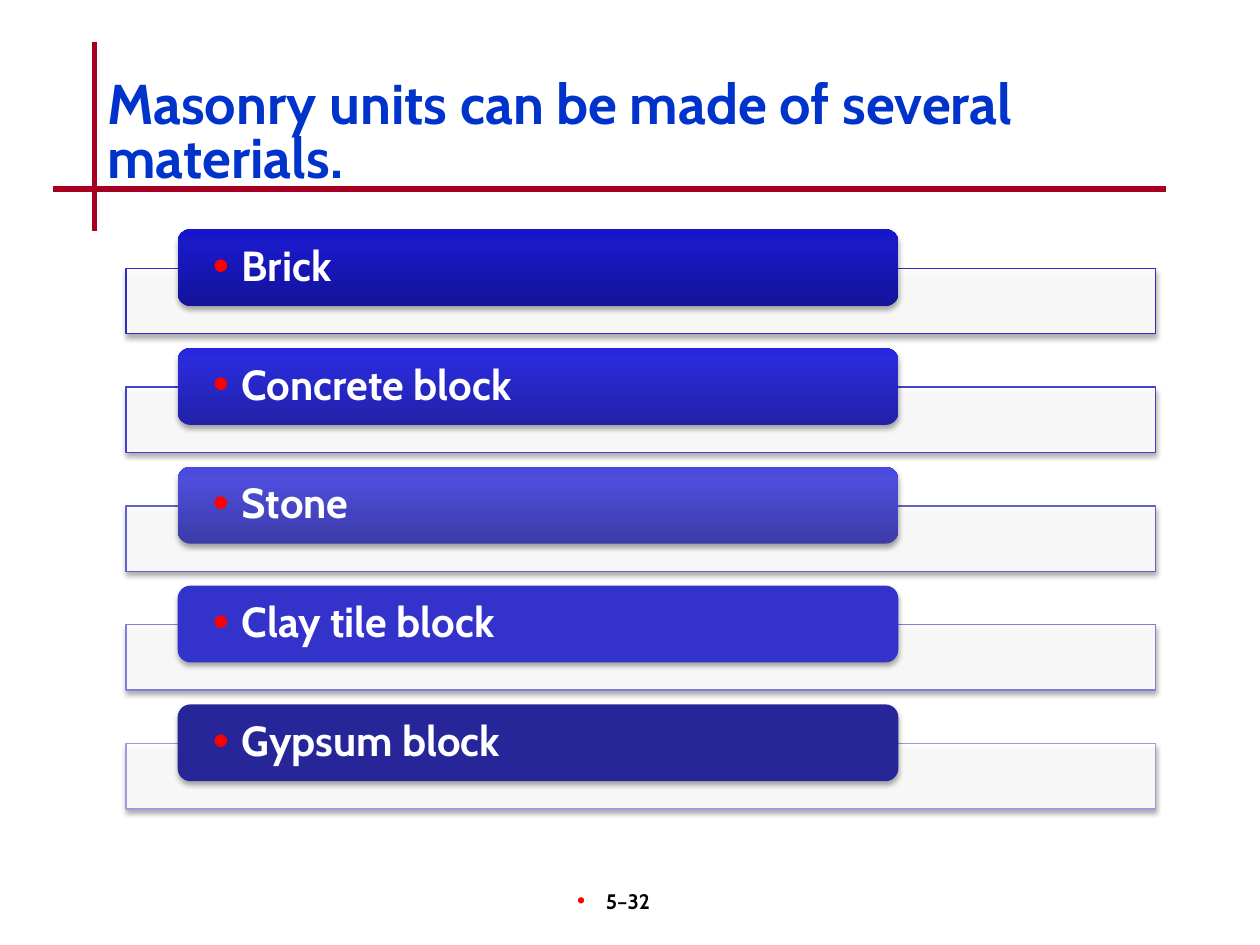
"""Build the slide listing the materials of masonry units."""
from lxml import etree
from pptx import Presentation
from pptx.dml.color import RGBColor
from pptx.enum import shapes, text
from pptx.oxml import parse_xml
from pptx.oxml.ns import nsdecls, qn
from pptx.util import Inches, Pt

TITLE = "Masonry units can be made of several materials."
PAGE = "5–32"
MATERIALS = [
    ("Brick", "2E2EB9", ("13139A", "1919C8", "1515CC")),
    ("Concrete block", "4141CB", ("2121A7", "2A2AD9", "2727DD")),
    ("Stone", "6060D0", ("3B3BA8", "4D4DDA", "4A4ADE")),
    ("Clay tile block", "7E7ED6", ("3333CC",)),
    ("Gypsum block", "9C9CDD", ("262699",)),
]
COLORS = {"title": "0033CC", "rule": "A50021", "bullet": "FF0000",
          "page": "000000", "white": "FFFFFF", "shadow": "000000"}
RULES = [(0.75, 0.33, 0.75, 1.83), (0.42, 1.5, 9.25, 1.5)]
FONT = "Cabin"
STOPS = (0, 80, 100)
FIRST_TOP, LAST_TOP = 1.82, 5.59
PITCH = (LAST_TOP - FIRST_TOP) / (len(MATERIALS) - 1)
BAR_DROP = 0.31
HANG = 0.23


def rgb(value):
    return RGBColor.from_string(value)


def write(paragraph, words, size, color):
    run = paragraph.add_run()
    run.text = words
    run.font.name, run.font.size, run.font.bold = FONT, Pt(size), True
    run.font.color.rgb = rgb(color)


def add_bullet(paragraph, percent):
    props = paragraph._p.get_or_add_pPr()
    props.set("marL", str(Inches(HANG)))
    props.set("indent", str(-Inches(HANG)))
    tint = etree.SubElement(props, qn("a:buClr"))
    etree.SubElement(tint, qn("a:srgbClr"), val=COLORS["bullet"])
    etree.SubElement(props, qn("a:buSzPct"), val=str(percent * 1000))
    etree.SubElement(props, qn("a:buFont"), typeface="Arial")
    etree.SubElement(props, qn("a:buChar"), char="•")


def add_shadow(shape):
    shape._element.spPr.append(parse_xml(
        f'<a:effectLst {nsdecls("a")}><a:outerShdw blurRad="{Pt(3.1)}" dist="{Pt(1.8)}" '
        f'dir="5400000" rotWithShape="0"><a:srgbClr val="{COLORS["shadow"]}">'
        '<a:alpha val="35000"/></a:srgbClr></a:outerShdw></a:effectLst>'))


def fill_gradient(shape, tones):
    stops = "".join(f'<a:gs pos="{pos * 1000}"><a:srgbClr val="{tone}"/></a:gs>'
                    for pos, tone in zip(STOPS, tones))
    shape._element.spPr.find(qn("a:prstGeom")).addnext(parse_xml(
        f'<a:gradFill {nsdecls("a")} rotWithShape="1"><a:gsLst>{stops}</a:gsLst>'
        '<a:lin ang="16200000" scaled="0"/></a:gradFill>'))


def add_box(slide, preset, *place):
    return slide.shapes.add_shape(preset, *map(Inches, place))


def add_material(slide, top, name, outline, tones):
    bar = add_box(slide, shapes.MSO_SHAPE.RECTANGLE, 1, top + BAR_DROP, 8.17, 0.52)
    bar.fill.solid()
    bar.fill.fore_color.rgb = rgb(COLORS["white"])
    tint = bar._element.spPr.find(f'{qn("a:solidFill")}/{qn("a:srgbClr")}')
    etree.SubElement(tint, qn("a:alpha"), val="90000")
    bar.line.color.rgb = rgb(outline)
    bar.line.width = Pt(0.75)
    add_shadow(bar)

    label = add_box(slide, shapes.MSO_SHAPE.ROUNDED_RECTANGLE, 1.41, top, 5.72, 0.61)
    if len(tones) > 1:
        fill_gradient(label, tones)
    else:
        label.fill.solid()
        label.fill.fore_color.rgb = rgb(tones[0])
    label.line.fill.background()
    add_shadow(label)
    frame = label.text_frame
    frame.margin_left = frame.margin_right = Inches(0.25)
    frame.margin_top = frame.margin_bottom = 0
    frame.vertical_anchor = text.MSO_ANCHOR.MIDDLE
    line = frame.paragraphs[0]
    line.alignment = text.PP_ALIGN.LEFT
    line.line_spacing = 0.9
    add_bullet(line, 110)
    write(line, name, 24, COLORS["white"])


def add_title(slide):
    title = slide.shapes.title
    title.left, title.top, title.width, title.height = map(Inches, (0.75, 0.55, 8.5, 1))
    frame = title.text_frame
    frame.word_wrap = True
    frame.auto_size = text.MSO_AUTO_SIZE.NONE
    frame.vertical_anchor = text.MSO_ANCHOR.BOTTOM
    line = frame.paragraphs[0]
    line.alignment = text.PP_ALIGN.LEFT
    line.line_spacing = 0.8
    write(line, TITLE, 32, COLORS["title"])


def add_page_number(slide):
    frame = slide.shapes.add_textbox(*map(Inches, (3.92, 7, 2.08, 0.5))).text_frame
    frame.word_wrap = True
    frame.margin_right = Inches(0.28)
    line = frame.paragraphs[0]
    line.alignment = text.PP_ALIGN.CENTER
    add_bullet(line, 110)
    write(line, PAGE, 12, COLORS["page"])


def main():
    deck = Presentation()
    deck.slide_width, deck.slide_height = Inches(10), Inches(7.5)
    slide = deck.slides.add_slide(deck.slide_layouts[5])
    for ends in RULES:
        rule = slide.shapes.add_connector(shapes.MSO_CONNECTOR.STRAIGHT, *map(Inches, ends))
        rule.line.color.rgb = rgb(COLORS["rule"])
        rule.line.width = Pt(3)
        etree.SubElement(rule._element.spPr, qn("a:effectLst"))
    add_title(slide)
    for row, material in enumerate(MATERIALS):
        add_material(slide, FIRST_TOP + row * PITCH, *material)
    add_page_number(slide)
    deck.save("out.pptx")


if __name__ == "__main__":
    main()
